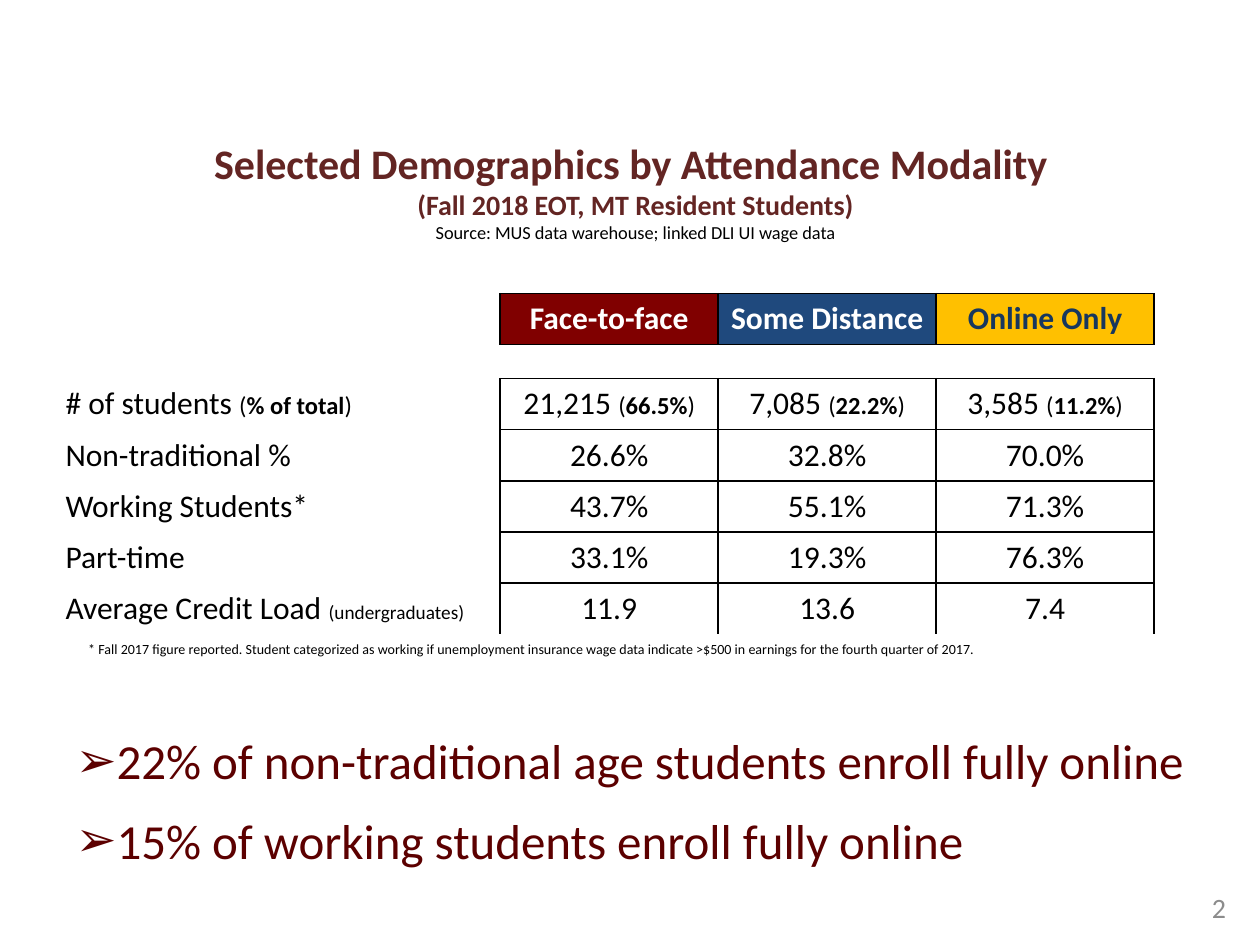
from dataclasses import dataclass

from lxml.etree import SubElement
from pptx import Presentation
from pptx.dml.color import RGBColor
from pptx.enum.text import MSO_ANCHOR as Anchor, MSO_AUTO_SIZE as Fit, PP_ALIGN as Align
from pptx.oxml.ns import qn
from pptx.util import Inches, Pt

FONT = "Calibri"
BLACK = "000000"
MAROON = "5C0000"
ROW, GAP, NOTE = 0.4, 0.27, 0.24
SPACER, FOOT = 1, 7
SIDES = {"lnL": (0, -1), "lnR": (0, 1), "lnT": (-1, 0), "lnB": (1, 0)}


@dataclass
class Run:
    text: str
    size: float = 18
    color: str = BLACK
    bold: bool = False


@dataclass
class Head:
    text: str
    fill: str
    color: str = "FFFFFF"


@dataclass
class Stat:
    label: list[Run]
    values: list[list[Run]]


def rgb(code: str) -> RGBColor:
    return RGBColor.from_string(code)


def write(para, runs: list[Run], align=Align.LEFT) -> None:
    para.alignment = align
    for item in runs:
        run = para.add_run()
        run.text = item.text
        font = run.font
        font.name, font.size, font.bold = FONT, Pt(item.size), item.bold
        font.color.rgb = rgb(item.color)


def place(shape, left: float, top: float, width: float, height: float):
    """Move a text shape and return its frame, ready to fill."""
    shape.left, shape.top = Inches(left), Inches(top)
    shape.width, shape.height = Inches(width), Inches(height)
    frame = shape.text_frame
    frame.auto_size, frame.word_wrap = Fit.NONE, True
    frame.vertical_anchor = Anchor.TOP
    return frame


def share(count: str, part: str) -> list[Run]:
    """A count followed by a smaller bold part in brackets."""
    return [Run(count + " "), Run("(", 14), Run(part, 14, bold=True), Run(")", 14)]


def plain(label: list[Run], *values: str) -> Stat:
    return Stat(label, [[Run(value)] for value in values])


def rule(cell, row: int, col: int, framed: set) -> None:
    """Draw a side where the cell or its neighbour is framed, not above the footnote."""
    props = cell._tc.get_or_add_tcPr()
    for tag, (down, right) in SIDES.items():
        near = (row + down, col + right)
        line = SubElement(props, qn(f"a:{tag}"), w=str(Pt(1)))
        if framed & {(row, col), near} and FOOT not in (row, near[0]):
            fill = SubElement(line, qn("a:solidFill"))
            SubElement(fill, qn("a:srgbClr"), val=BLACK)
        else:
            SubElement(line, qn("a:noFill"))


def add_stats(slide, heads: list[Head], stats: list[Stat], note: str) -> None:
    heights = [ROW, GAP] + [ROW] * len(stats) + [NOTE]
    widths = [3.55] + [1.73] * len(heads)
    table = slide.shapes.add_table(
        len(heights), len(widths), Inches(0.42), Inches(2.33),
        Inches(sum(widths)), Inches(sum(heights))).table
    table.first_row = table.horz_banding = False
    for row, height in zip(table.rows, heights):
        row.height = Inches(height)
    for col, width in zip(table.columns, widths):
        col.width = Inches(width)

    framed = {(r, c) for r in range(FOOT) if r != SPACER
              for c in range(1, len(widths))}
    for r in range(len(heights)):
        for c in range(len(widths)):
            cell = table.cell(r, c)
            rule(cell, r, c, framed)
            cell.fill.background()
            if r in (SPACER, FOOT):
                end = cell.text_frame.paragraphs[0]._p.get_or_add_endParaRPr()
                end.set("sz", "1000" if r == SPACER else "800")

    for c, head in enumerate(heads, 1):
        cell = table.cell(0, c)
        cell.fill.solid()
        cell.fill.fore_color.rgb = rgb(head.fill)
        run = Run(head.text, color=head.color, bold=True)
        write(cell.text_frame.paragraphs[0], [run], Align.CENTER)
    for r, stat in enumerate(stats, SPACER + 1):
        write(table.cell(r, 0).text_frame.paragraphs[0], stat.label)
        for c, value in enumerate(stat.values, 1):
            write(table.cell(r, c).text_frame.paragraphs[0], value, Align.CENTER)

    foot = table.cell(FOOT, 0)
    foot.merge(table.cell(FOOT, len(heads)))
    foot.margin_left = Inches(0.28)
    foot.vertical_anchor = Anchor.MIDDLE
    write(foot.text_frame.paragraphs[0], [Run(note, 8)])


def add_title(slide, lines: list[Run]) -> None:
    frame = place(slide.shapes.title, 0.92, 1.04, 8.25, 0.95)
    for i, line in enumerate(lines):
        para = frame.add_paragraph() if i else frame.paragraphs[0]
        write(para, [line], Align.CENTER)


def add_points(slide, points: list[str]) -> None:
    frame = place(slide.placeholders[1], 0.5, 5.75, 9.08, 1.21)
    for i, point in enumerate(points):
        para = frame.add_paragraph() if i else frame.paragraphs[0]
        para.space_before = Pt(12 if i else 0)
        props = para._p.get_or_add_pPr()
        props.set("marL", str(Inches(0.31)))
        props.set("indent", str(-Inches(0.31)))
        SubElement(props, qn("a:buChar"), char="➢")
        write(para, [Run(point, 28, MAROON)])


def add_number(slide, number: str) -> None:
    box = slide.shapes.add_textbox(0, 0, 0, 0)
    frame = place(box, 7.5, 7, 2.33, 0.4)
    frame.vertical_anchor = Anchor.MIDDLE
    write(frame.paragraphs[0], [Run(number, 16, "8C8C8C")], Align.RIGHT)


def main() -> None:
    deck = Presentation()
    deck.slide_width, deck.slide_height = Inches(10), Inches(7.5)
    slide = deck.slides.add_slide(deck.slide_layouts[1])
    add_number(slide, "2")
    heads = [
        Head("Face-to-face", "800000"),
        Head("Some Distance", "1F497D"),
        Head("Online Only", "FFC000", "17375E"),
    ]
    stats = [
        Stat(share("# of students", "% of total"),
             [share("21,215", "66.5%"), share("7,085", "22.2%"),
              share("3,585", "11.2%")]),
        plain([Run("Non-traditional %")], "26.6%", "32.8%", "70.0%"),
        plain([Run("Working Students*")], "43.7%", "55.1%", "71.3%"),
        plain([Run("Part-time")], "33.1%", "19.3%", "76.3%"),
        plain([Run("Average Credit Load "), Run("(undergraduates)", 11)],
              "11.9", "13.6", "7.4"),
    ]
    add_stats(slide, heads, stats,
              "* Fall 2017 figure reported. Student categorized as working if "
              "unemployment insurance wage data indicate >$500 in earnings for "
              "the fourth quarter of 2017.")
    add_title(slide, [
        Run("Selected Demographics by Attendance Modality ", 24, "632523", True),
        Run("(Fall 2018 EOT, MT Resident Students)", 16, "632523", True),
        Run("Source: MUS data warehouse; linked DLI UI wage data", 10.5),
    ])
    add_points(slide, [
        "22% of non-traditional age students enroll fully online",
        "15% of working students enroll fully online",
    ])
    deck.save("out.pptx")


if __name__ == "__main__":
    main()
